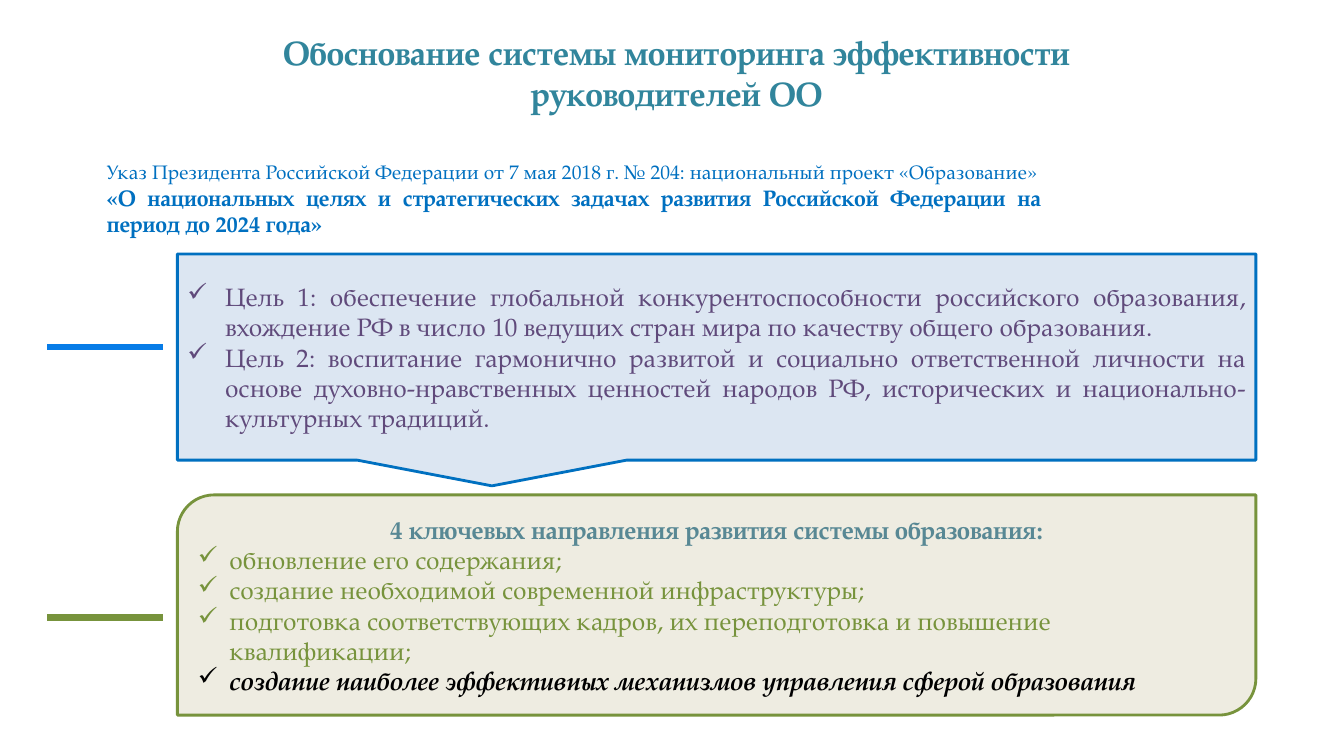
from dataclasses import dataclass

from lxml.etree import SubElement
from pptx import Presentation
from pptx.dml.color import RGBColor
from pptx.enum.shapes import MSO_CONNECTOR, MSO_SHAPE
from pptx.enum.text import MSO_ANCHOR, PP_ALIGN
from pptx.oxml.ns import qn
from pptx.slide import Slide
from pptx.text.text import TextFrame
from pptx.util import Pt


@dataclass(frozen=True)
class Theme:
    font: str = "TeX Gyre Pagella"
    teal: str = "31859C"
    grey_teal: str = "588894"
    blue: str = "0070C0"
    bright_blue: str = "077CE7"
    pale_blue: str = "DCE6F2"
    purple: str = "604A7B"
    green: str = "77933C"
    cream: str = "EEECE1"
    black: str = "000000"
    title_size: float = 24
    body_size: float = 18
    decree_name_size: float = 16
    decree_size: float = 14
    outline: float = 2
    marker: float = 4.5


THEME = Theme()


@dataclass(frozen=True)
class Line:
    text: str
    color: str
    size: float = THEME.body_size
    align: PP_ALIGN = PP_ALIGN.LEFT
    bold: bool = False
    italic: bool = False
    bullet_indent: float = 0


@dataclass(frozen=True)
class Box:
    left: float
    top: float
    width: float
    height: float


@dataclass(frozen=True)
class Panel:
    preset: MSO_SHAPE
    box: Box
    fill: str
    outline: str
    marker_color: str
    marker_y: float
    lines: list[Line]


MARKER_LEFT, MARKER_RIGHT = 33.84, 116.64

TITLE_BOX = Box(141.84, 19.44, 682.56, 65.52)
TITLE = [
    Line("Обоснование системы мониторинга эффективности руководителей ОО",
         THEME.teal, THEME.title_size, PP_ALIGN.CENTER, bold=True),
]

DECREE_BOX = Box(69.12, 110.88, 682.56, 64)
DECREE = [
    Line("Указ Президента Российской Федерации от 7 мая 2018 г. № 204: "
         "национальный проект «Образование»",
         THEME.blue, THEME.decree_size, PP_ALIGN.JUSTIFY),
    Line("«О национальных целях и стратегических задачах развития "
         "Российской Федерации на период до 2024 года»",
         THEME.blue, THEME.decree_name_size, PP_ALIGN.JUSTIFY, bold=True),
]

GOALS = [
    "Цель 1: обеспечение глобальной конкурентоспособности российского образования, "
    "вхождение РФ в число 10 ведущих стран мира по качеству общего образования.",
    "Цель 2: воспитание гармонично развитой и социально ответственной личности на основе "
    "духовно-нравственных ценностей народов РФ, исторических и национально-культурных традиций.",
]
DIRECTIONS = [
    "обновление его содержания;",
    "создание необходимой современной инфраструктуры;",
    "подготовка соответствующих кадров, их переподготовка и повышение квалификации;",
]

PANELS = [
    Panel(
        MSO_SHAPE.RECTANGULAR_CALLOUT, Box(126.72, 181.44, 770.4, 147.24),
        THEME.pale_blue, THEME.blue, THEME.bright_blue, 248.04,
        [Line(goal, THEME.purple, align=PP_ALIGN.JUSTIFY, bullet_indent=27) for goal in GOALS],
    ),
    Panel(
        MSO_SHAPE.ROUND_2_DIAG_RECTANGLE, Box(126.72, 353.52, 770.4, 157.32),
        THEME.cream, THEME.green, THEME.green, 441,
        [
            Line("4 ключевых направления развития системы образования:",
                 THEME.grey_teal, align=PP_ALIGN.CENTER, bold=True),
            *(Line(direction, THEME.green, bullet_indent=22.5) for direction in DIRECTIONS),
            Line("создание наиболее эффективных механизмов управления сферой образования",
                 THEME.black, bold=True, italic=True, bullet_indent=22.5),
        ],
    ),
]


def rgb(color: str) -> RGBColor:
    return RGBColor.from_string(color)


def place(box: Box) -> tuple[Pt, Pt, Pt, Pt]:
    return Pt(box.left), Pt(box.top), Pt(box.width), Pt(box.height)


def write_lines(frame: TextFrame, lines: list[Line]) -> None:
    frame.word_wrap = True
    for index, line in enumerate(lines):
        paragraph = frame.add_paragraph() if index else frame.paragraphs[0]
        paragraph.text = line.text
        paragraph.alignment = line.align
        if line.bullet_indent:
            properties = paragraph._p.get_or_add_pPr()
            properties.set("marL", str(Pt(line.bullet_indent)))
            properties.set("indent", str(-Pt(line.bullet_indent)))
            SubElement(properties, qn("a:buChar")).set("char", "✓")
        font = paragraph.font
        font.name = THEME.font
        font.size = Pt(line.size)
        font.bold = line.bold
        font.italic = line.italic
        font.color.rgb = rgb(line.color)


def add_text(slide: Slide, box: Box, lines: list[Line]) -> None:
    write_lines(slide.shapes.add_textbox(*place(box)).text_frame, lines)


def add_panel(slide: Slide, panel: Panel) -> None:
    """Draw a panel with its text and the marker line to its left."""
    shape = slide.shapes.add_shape(panel.preset, *place(panel.box))
    shape.shadow.inherit = False
    shape.fill.solid()
    shape.fill.fore_color.rgb = rgb(panel.fill)
    shape.line.color.rgb = rgb(panel.outline)
    shape.line.width = Pt(THEME.outline)
    shape.text_frame.vertical_anchor = MSO_ANCHOR.MIDDLE
    write_lines(shape.text_frame, panel.lines)

    marker = slide.shapes.add_connector(
        MSO_CONNECTOR.STRAIGHT,
        Pt(MARKER_LEFT), Pt(panel.marker_y), Pt(MARKER_RIGHT), Pt(panel.marker_y),
    )
    marker.line.color.rgb = rgb(panel.marker_color)
    marker.line.width = Pt(THEME.marker)
    SubElement(marker._element.spPr, qn("a:effectLst"))


def main() -> None:
    presentation = Presentation()
    presentation.slide_width = Pt(960)
    presentation.slide_height = Pt(540)
    slide = presentation.slides.add_slide(presentation.slide_layouts[6])
    add_text(slide, DECREE_BOX, DECREE)
    add_text(slide, TITLE_BOX, TITLE)
    for panel in PANELS:
        add_panel(slide, panel)
    presentation.save("out.pptx")


if __name__ == "__main__":
    main()
